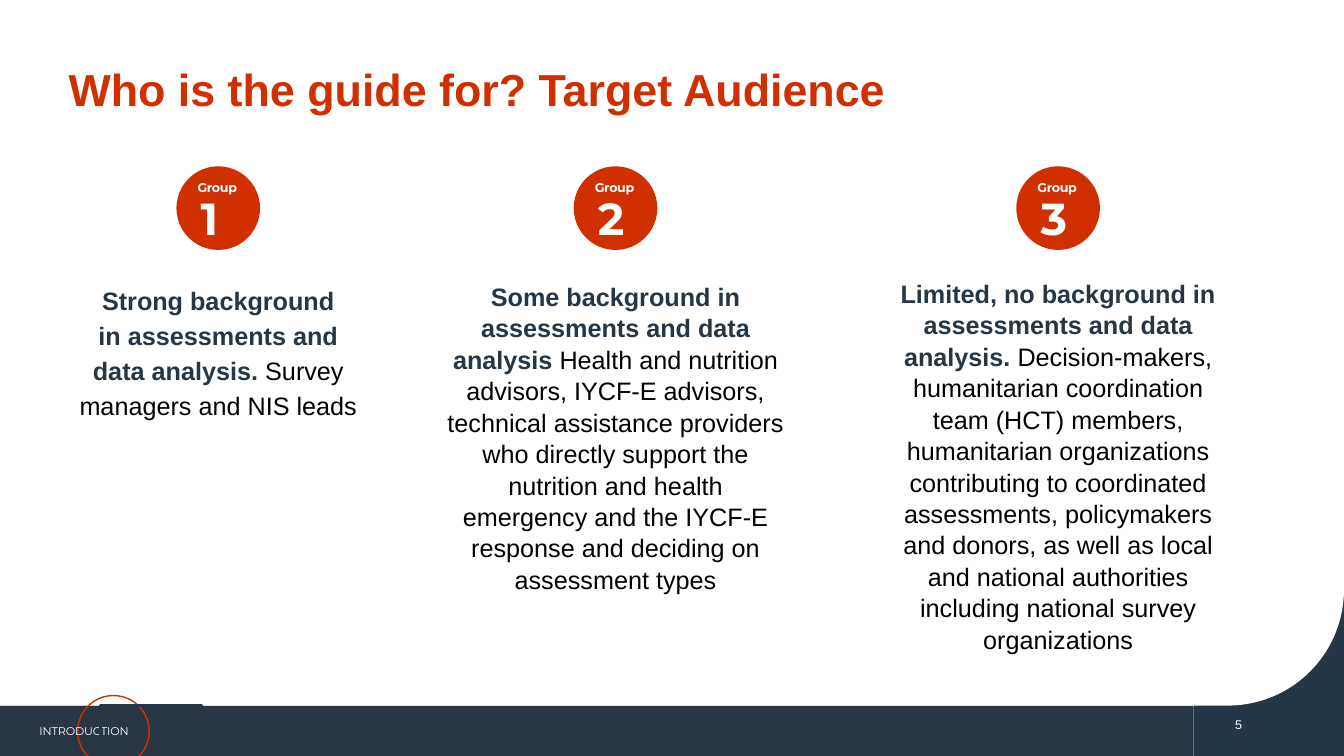
import pptx
import pptx.util
import pptx.dml.color
import pptx.enum.shapes
import pptx.enum.text

Inches = pptx.util.Inches
Pt = pptx.util.Pt
Shape = pptx.enum.shapes.MSO_SHAPE
Align = pptx.enum.text.PP_ALIGN
Anchor = pptx.enum.text.MSO_ANCHOR

COLORS = {"red": "D03000", "navy": "253746", "bar": "293745", "white": "FFFFFF", "black": "000000"}
TAB_OUTLINE = [(1.48, 7.1), (0.39, 7.1), (0.35, 7.11), (0.32, 7.13), (0.29, 7.17), (0.28, 7.21),
               (0.27, 7.25), (0.28, 7.3), (0.29, 7.34), (0.32, 7.37), (0.35, 7.4), (0.39, 7.4),
               (1.48, 7.4)]
TAB_ARC = [(1.4, 7.5), (1.45, 7.44), (1.48, 7.39), (1.49, 7.35), (1.5, 7.3), (1.51, 7.25),
           (1.5, 7.2), (1.49, 7.15), (1.48, 7.1), (1.45, 7.06), (1.43, 7.02), (1.4, 7)]
BODY_INSETS = (0.1, 0.05, 0.1, 0.05)
LABEL_INSETS = (0, 0.02, 0, 0)

GROUPS = [
    (1.75, (0.65, 2.74, 3.03, 1.86), 1.15, [
        [("Strong background", "navy")],
        [("in assessments and data analysis. ", "navy"), ("Survey managers and NIS leads", "black")],
    ]),
    (5.69, (4.32, 2.73, 3.57, 3.37), 1.04, [
        [("Some background in assessments and data analysis ", "navy"),
         ("Health and nutrition advisors, IYCF-E advisors, technical assistance providers who "
          "directly support the nutrition and health emergency and the IYCF-E response and "
          "deciding on assessment types", "black")],
    ]),
    (10.08, (8.81, 2.7, 3.37, 4.05), 1.04, [
        [("Limited, no background in assessments and data analysis. ", "navy"),
         ("Decision-makers, humanitarian coordination team (HCT) members, humanitarian "
          "organizations contributing to coordinated assessments, policymakers and donors, as "
          "well as local and national authorities including national survey organizations", "black")],
    ]),
]


def color(name):
    return pptx.dml.color.RGBColor.from_string(COLORS[name])


def paint(shape, fill=None, line=None, width=1):
    shape.shadow.inherit = False
    if fill:
        shape.fill.solid()
        shape.fill.fore_color.rgb = color(fill)
    else:
        shape.fill.background()
    if line:
        shape.line.color.rgb = color(line)
        shape.line.width = Pt(width)
    else:
        shape.line.fill.background()


def add_preset(shapes, kind, place, **style):
    shape = shapes.add_shape(kind, *map(Inches, place))
    paint(shape, **style)


def add_outline(page, points, close, **style):
    builder = page.shapes.build_freeform(*points[0], scale=Inches(1))
    builder.add_line_segments(points[1:], close=close)
    paint(builder.convert_to_shape(), **style)


def set_insets(frame, insets):
    frame.margin_left, frame.margin_top, frame.margin_right, frame.margin_bottom = map(Inches, insets)


def set_font(font, size, tint, bold=False, name="Arial"):
    font.name, font.size, font.bold = name, Pt(size), bold
    font.color.rgb = color(tint)


def add_label(shapes, place, text, size, align=Align.LEFT, bold=False, name="Montserrat",
              insets=LABEL_INSETS, wrap=True, spacing=0):
    frame = shapes.add_textbox(*map(Inches, place)).text_frame
    set_insets(frame, insets)
    frame.word_wrap = wrap
    para = frame.paragraphs[0]
    para.alignment = align
    span = para.add_run()
    span.text = text
    if spacing:
        span.font._element.set("spc", str(spacing))
    set_font(para.font, size, "white", bold, name)


def add_badge(page, number, left):
    badge = page.shapes.add_group_shape().shapes
    add_preset(badge, Shape.OVAL, (left, 1.65, 0.83, 0.83), fill="red")
    add_label(badge, (left + 0.24, 1.87, 0.12, 0.55), str(number), 32, bold=True, spacing=-60)
    add_label(badge, (left + 0.15, 1.76, 0.51, 0.17), "Group", 9, Align.CENTER, True, spacing=-20)


def add_description(page, place, line_spacing, paragraphs):
    frame = page.shapes.add_textbox(*map(Inches, place)).text_frame
    frame.word_wrap = True
    set_insets(frame, BODY_INSETS)
    for index, spans in enumerate(paragraphs):
        para = frame.add_paragraph() if index else frame.paragraphs[0]
        para.alignment = Align.CENTER
        para.line_spacing = line_spacing
        for text, tint in spans:
            span = para.add_run()
            span.text = text
            set_font(span.font, 18, tint, tint == "navy")


def add_backdrop(page):
    shapes = page.shapes
    add_preset(shapes, Shape.RECTANGLE, (11.84, 5.7, 1.49, 1.8), fill="navy")
    add_preset(shapes, Shape.RECTANGLE, (0, 7, 11.84, 0.5), fill="bar")
    add_preset(shapes, Shape.ROUND_2_DIAG_RECTANGLE, (0, 0.09, 13.33, 6.91), fill="white")
    add_outline(page, TAB_OUTLINE, True, fill="red")
    add_label(shapes, (12.06, 7.06, 0.36, 0.25), "5", 9, Align.RIGHT, name="Arial",
              insets=BODY_INSETS, wrap=False)
    add_preset(shapes, Shape.OVAL, (0.77, 6.9, 0.71, 0.71), line="red")
    add_label(shapes, (0.39, 7.17, 1.01, 0.16), "INTRODUCTION", 8, spacing=-10)
    add_outline(page, TAB_ARC, False, line="navy", width=2.25)


def add_title(page, text):
    title = page.shapes.title
    title.left, title.top, title.width, title.height = map(Inches, (0.55, 0.46, 9.89, 0.83))
    frame = title.text_frame
    frame.text = text
    frame.auto_size = pptx.enum.text.MSO_AUTO_SIZE.NONE
    frame.vertical_anchor = Anchor.MIDDLE
    set_insets(frame, (0.13,) * 4)
    para = frame.paragraphs[0]
    para.alignment = Align.LEFT
    set_font(para.font, 32, "red", True)
    page.shapes._spTree.append(title._element)


def main():
    deck = pptx.Presentation()
    deck.slide_width, deck.slide_height = Inches(13.33), Inches(7.5)
    page = deck.slides.add_slide(deck.slide_layouts[5])
    add_backdrop(page)
    add_title(page, "Who is the guide for? Target Audience")
    for number, (left, place, line_spacing, paragraphs) in enumerate(GROUPS, 1):
        add_badge(page, number, left)
        add_description(page, place, line_spacing, paragraphs)
    deck.save("out.pptx")


if __name__ == "__main__":
    main()
